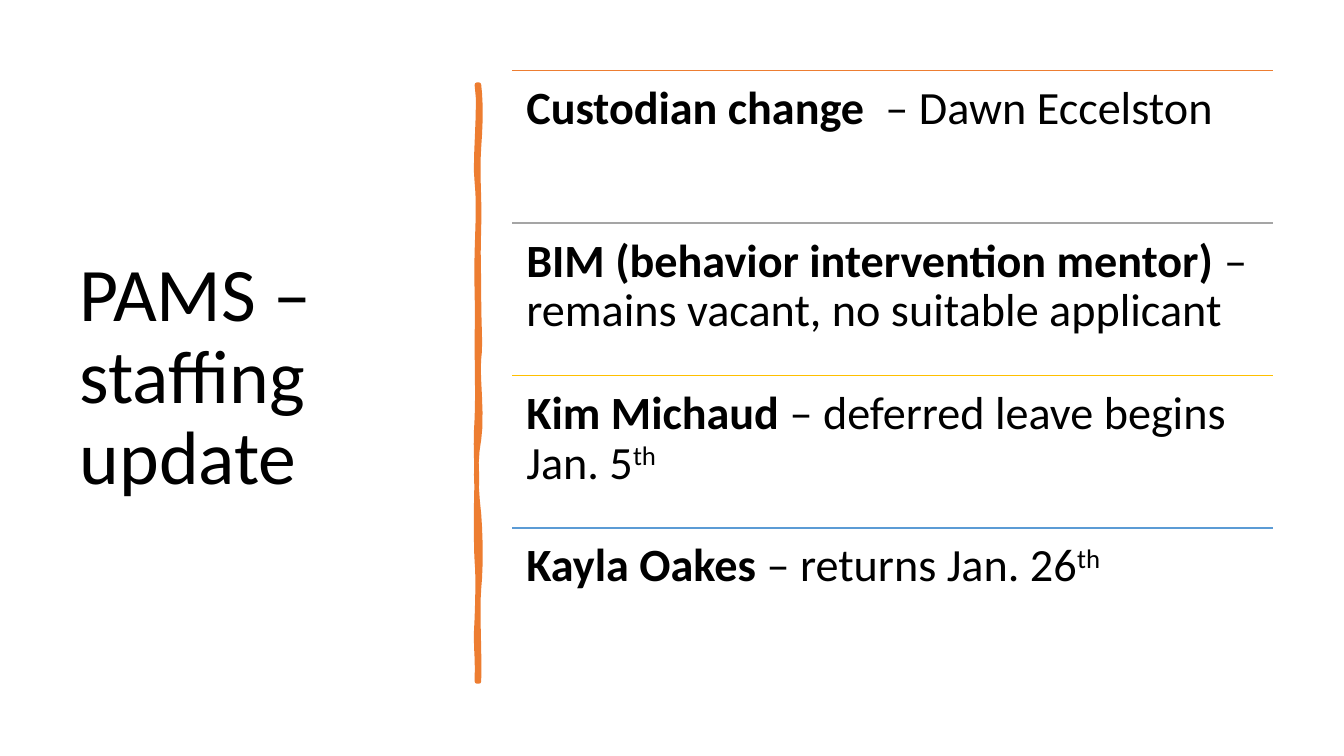
from lxml.etree import SubElement
from pptx import Presentation
from pptx.dml.color import RGBColor
from pptx.enum.shapes import MSO_CONNECTOR as Connector
from pptx.enum.text import MSO_ANCHOR as Anchor, MSO_AUTO_SIZE as AutoSize, PP_ALIGN as Align
from pptx.oxml.ns import qn
from pptx.util import Inches, Pt

COLORS = {
    "text": "000000",
    "orange": "ED7D31",
    "gray": "A5A5A5",
    "gold": "FFC000",
    "blue": "5B9BD5",
}
FONT = "Calibri"

UPDATES = [
    ("orange", "Custodian change  ", "– Dawn Eccelston", ""),
    ("gray", "BIM (behavior intervention mentor) ", "– remains vacant, no suitable applicant", ""),
    ("gold", "Kim Michaud ", "– deferred leave begins Jan. 5", "th"),
    ("blue", "Kayla Oakes ", "– returns Jan. 26", "th"),
]

BRUSH_START = (0.04, 0)
BRUSH_CURVES = [
    [(0.06, 0.18), (0.06, 0.35), (0.04, 0.62)],
    [(0.02, 0.89), (0.05, 1.11), (0.04, 1.42)],
    [(0.03, 1.73), (0.04, 1.78), (0.04, 2.1)],
    [(0.04, 2.41), (0.06, 2.58), (0.04, 2.72)],
    [(0.02, 2.86), (0.08, 3.3), (0.04, 3.52)],
    [(0, 3.73), (0.01, 4), (0.04, 4.26)],
    [(0.06, 4.52), (0.06, 4.8), (0.04, 5)],
    [(0.02, 5.19), (0.05, 5.66), (0.04, 5.92)],
    [(0.03, 5.92), (0.02, 5.92), (0.02, 5.92)],
    [(0.03, 5.62), (0, 5.6), (0.02, 5.29)],
    [(0.03, 4.99), (0.03, 4.86), (0.02, 4.73)],
    [(0.01, 4.6), (0.01, 4.11), (0.02, 3.93)],
    [(0.02, 3.75), (0, 3.61), (0.02, 3.31)],
    [(0.03, 3.02), (0.02, 2.89), (0.02, 2.51)],
    [(0.03, 2.14), (0.01, 1.97), (0.02, 1.66)],
    [(0.03, 1.34), (0.04, 1.16), (0.02, 0.97)],
    [(-0.01, 0.79), (0.06, 0.2), (0.02, 0)],
]


def rgb(name):
    return RGBColor.from_string(COLORS[name])


def style_paragraph(paragraph, size):
    paragraph.alignment = Align.LEFT
    paragraph.line_spacing = 0.9
    paragraph.font.name = FONT
    paragraph.font.size = Pt(size)
    paragraph.font.color.rgb = rgb("text")


def add_heading(slide, left, top, width, height):
    heading = slide.shapes.title
    heading.left, heading.top = Inches(left), Inches(top)
    heading.width, heading.height = Inches(width), Inches(height)
    frame = heading.text_frame
    frame.text = "PAMS – staffing update"
    frame.word_wrap = True
    frame.auto_size = AutoSize.NONE
    frame.vertical_anchor = Anchor.MIDDLE
    style_paragraph(frame.paragraphs[0], 54)


def curve_points(start, curves, steps=6):
    for first, second, end in curves:
        for step in range(1, steps + 1):
            t = step / steps
            weights = ((1 - t) ** 3, 3 * t * (1 - t) ** 2, 3 * t**2 * (1 - t), t**3)
            knots = (start, first, second, end)
            yield tuple(sum(w * knot[axis] for w, knot in zip(weights, knots)) for axis in (0, 1))
        start = end


def add_brush_stroke(slide, left, top):
    def place(point):
        return Inches(left + point[0]), Inches(top + point[1])

    builder = slide.shapes.build_freeform(*place(BRUSH_START))
    builder.add_line_segments([place(point) for point in curve_points(BRUSH_START, BRUSH_CURVES)])
    stroke = builder.convert_to_shape()
    stroke.shadow.inherit = False
    stroke.fill.solid()
    stroke.fill.fore_color.rgb = rgb("orange")
    stroke.line.color.rgb = rgb("orange")
    stroke.line.width = Pt(3.25)
    SubElement(stroke.line._get_or_add_ln(), qn("a:round"))


def add_update(slide, update, left, top, width, height):
    color, topic, detail, ordinal = update
    rule = slide.shapes.add_connector(
        Connector.STRAIGHT, Inches(left), Inches(top), Inches(left + width), Inches(top)
    )
    rule.line.color.rgb = rgb(color)
    rule.line.width = Pt(1)
    SubElement(rule._element.spPr, qn("a:effectLst"))

    note = slide.shapes.add_textbox(Inches(left), Inches(top), Inches(width), Inches(height))
    frame = note.text_frame
    frame.word_wrap = True
    frame.margin_left = frame.margin_right = Inches(0.14)
    frame.margin_top = frame.margin_bottom = Inches(0.14)
    paragraph = frame.paragraphs[0]
    style_paragraph(paragraph, 33)
    topic_run = paragraph.add_run()
    topic_run.text = topic
    topic_run.font.bold = True
    paragraph.add_run().text = detail
    if ordinal:
        ordinal_run = paragraph.add_run()
        ordinal_run.text = ordinal
        ordinal_run._r.get_or_add_rPr().set("baseline", "30000")


def add_updates(slide, left, top, width, height):
    row_height = height / len(UPDATES)
    for row, update in enumerate(UPDATES):
        add_update(slide, update, left, top + row * row_height, width, row_height)


def main():
    deck = Presentation()
    deck.slide_width, deck.slide_height = Inches(13.33), Inches(7.5)
    slide = deck.slides.add_slide(deck.slide_layouts[5])
    add_heading(slide, 0.69, 0.7, 3.74, 6.11)
    add_brush_stroke(slide, 4.71, 0.84)
    add_updates(slide, 5.08, 0.7, 7.55, 6.05)
    deck.save("out.pptx")


if __name__ == "__main__":
    main()
